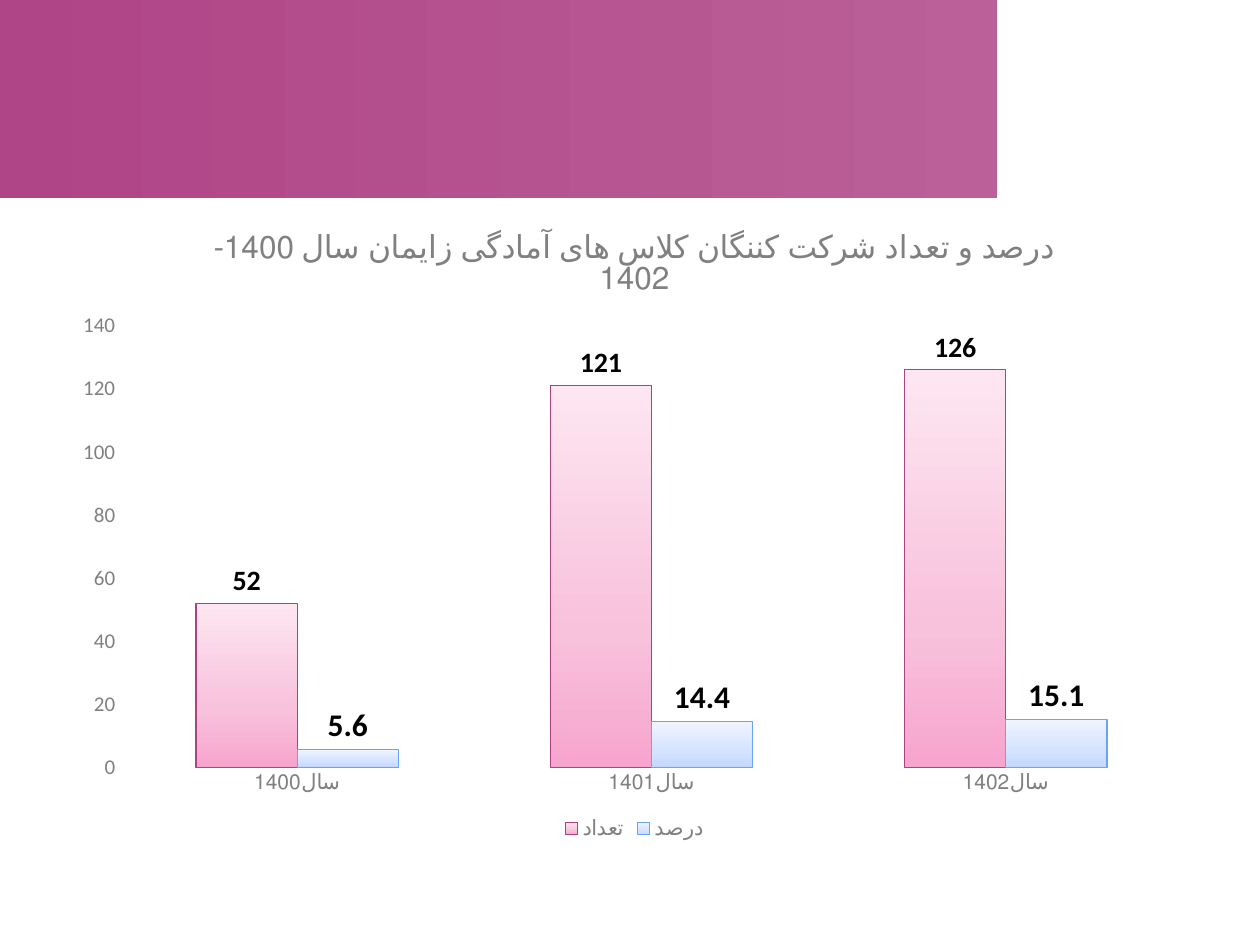
import copy

import pptx
import pptx.chart.data
import pptx.dml.color
import pptx.enum.chart
import pptx.enum.shapes
import pptx.oxml
import pptx.oxml.ns
import pptx.util
from pptx.util import Inches

RGBColor = pptx.dml.color.RGBColor
BLACK = RGBColor(0x00, 0x00, 0x00)
GRAY = RGBColor(0x80, 0x80, 0x80)
BAND_START = RGBColor(0xAF, 0x44, 0x86)
BAND_END = RGBColor(0xBB, 0x60, 0x98)
PINK_LINE = RGBColor(0xAB, 0x43, 0x83)
PINK_DARK = RGBColor(0xF7, 0xA5, 0xCE)
PINK_MIDDLE = RGBColor(0xF8, 0xC1, 0xDC)
PINK_LIGHT = RGBColor(0xFD, 0xE6, 0xF1)
BLUE_LINE = RGBColor(0x69, 0xA3, 0xF3)
BLUE_DARK = RGBColor(0xC4, 0xD8, 0xFF)
BLUE_MIDDLE = RGBColor(0xD5, 0xE3, 0xFF)
BLUE_LIGHT = RGBColor(0xEF, 0xF4, 0xFF)

TITLE = "درصد و تعداد شرکت کننگان کلاس های آمادگی زایمان سال 1400-1402"
CATEGORIES = ["سال1400", "سال1401", "سال1402"]
SERIES = [
    {
        "name": "تعداد",
        "values": [52, 121, 126],
        "stops": [(0, PINK_DARK), (0.35, PINK_MIDDLE), (1, PINK_LIGHT)],
        "line": PINK_LINE,
        "label_size": 16,
        "number_format": "General",
    },
    {
        "name": "درصد",
        "values": [5.6, 14.4, 15.1],
        "stops": [(0, BLUE_DARK), (0.35, BLUE_MIDDLE), (1, BLUE_LIGHT)],
        "line": BLUE_LINE,
        "label_size": 18,
        "number_format": "0.0",
    },
]
PLOT_LAYOUT = {"x": 0.05, "y": 0.19, "w": 0.93, "h": 0.69}


def set_values(target, values):
    for name, value in values.items():
        setattr(target, name, value)


def format_font(font, size, color, bold=False):
    set_values(font, {"name": "Calibri", "size": pptx.util.Pt(size), "bold": bold})
    font.color.rgb = color


def apply_gradient(fill, element, stops, angle):
    fill.gradient()
    fill.gradient_angle = angle
    stop_list = element.find(".//" + pptx.oxml.ns.qn("a:gsLst"))
    for _ in stops[2:]:
        stop_list.append(copy.deepcopy(stop_list[-1]))
    for stop, (position, color) in zip(fill.gradient_stops, stops):
        stop.position = position
        stop.color.rgb = color


def add_band(page):
    band = page.shapes.add_shape(
        pptx.enum.shapes.MSO_SHAPE.RECTANGLE, 0, 0, Inches(7.91), Inches(1.57)
    )
    band.shadow.inherit = False
    band.line.fill.background()
    apply_gradient(band.fill, band._element, [(0, BAND_START), (1, BAND_END)], 0)


def format_title(chart):
    para = chart.chart_title.text_frame.paragraphs[0]
    para._p.get_or_add_pPr().set("rtl", "1")
    span = para.add_run()
    span.text = TITLE
    format_font(span.font, 18, GRAY)
    chart.chart_title.include_in_layout = False


def format_axis(axis):
    no_tick = pptx.enum.chart.XL_TICK_MARK.NONE
    set_values(
        axis,
        {
            "major_tick_mark": no_tick,
            "minor_tick_mark": no_tick,
            "has_major_gridlines": False,
        },
    )
    axis.format.line.fill.background()
    format_font(axis.tick_labels.font, 12, GRAY)


def format_series(series, details):
    apply_gradient(series.format.fill, series._element, details["stops"], 90)
    series.format.line.color.rgb = details["line"]
    series.format.line.width = pptx.util.Pt(0.75)
    series.invert_if_negative = False
    labels = series.data_labels
    set_values(
        labels,
        {
            "show_value": True,
            "number_format": details["number_format"],
            "number_format_is_linked": False,
            "position": pptx.enum.chart.XL_LABEL_POSITION.OUTSIDE_END,
        },
    )
    format_font(labels.font, details["label_size"], BLACK, True)


def place_plot(chart):
    area = chart._chartSpace.chart.plotArea
    for old in area.findall(pptx.oxml.ns.qn("c:layout")):
        area.remove(old)
    sizes = "".join(f'<c:{key} val="{value}"/>' for key, value in PLOT_LAYOUT.items())
    layout = pptx.oxml.parse_xml(
        f'<c:layout {pptx.oxml.ns.nsdecls("c")}><c:manualLayout>'
        '<c:layoutTarget val="inner"/><c:xMode val="edge"/><c:yMode val="edge"/>'
        f"{sizes}</c:manualLayout></c:layout>"
    )
    area.insert(0, layout)


def add_class_chart(page):
    data = pptx.chart.data.CategoryChartData()
    data.categories = CATEGORIES
    for details in SERIES:
        data.add_series(details["name"], details["values"], details["number_format"])
    chart = page.shapes.add_chart(
        pptx.enum.chart.XL_CHART_TYPE.COLUMN_CLUSTERED,
        Inches(0.5), Inches(1.62), Inches(9.07), Inches(5.08), data,
    ).chart
    format_font(chart.font, 10, BLACK)
    format_title(chart)
    format_axis(chart.category_axis)
    format_axis(chart.value_axis)
    set_values(
        chart.value_axis, {"minimum_scale": 0, "maximum_scale": 140, "major_unit": 20}
    )
    plot = chart.plots[0]
    set_values(plot, {"gap_width": 150, "overlap": 0, "vary_by_categories": False})
    for series, details in zip(plot.series, SERIES):
        format_series(series, details)
    chart.has_legend = True
    set_values(
        chart.legend,
        {
            "position": pptx.enum.chart.XL_LEGEND_POSITION.BOTTOM,
            "include_in_layout": False,
        },
    )
    format_font(chart.legend.font, 12, GRAY)
    place_plot(chart)


def main():
    deck = pptx.Presentation()
    set_values(deck, {"slide_width": Inches(10), "slide_height": Inches(7.5)})
    page = deck.slides.add_slide(deck.slide_layouts[6])
    add_band(page)
    add_class_chart(page)
    deck.save("out.pptx")


if __name__ == "__main__":
    main()
